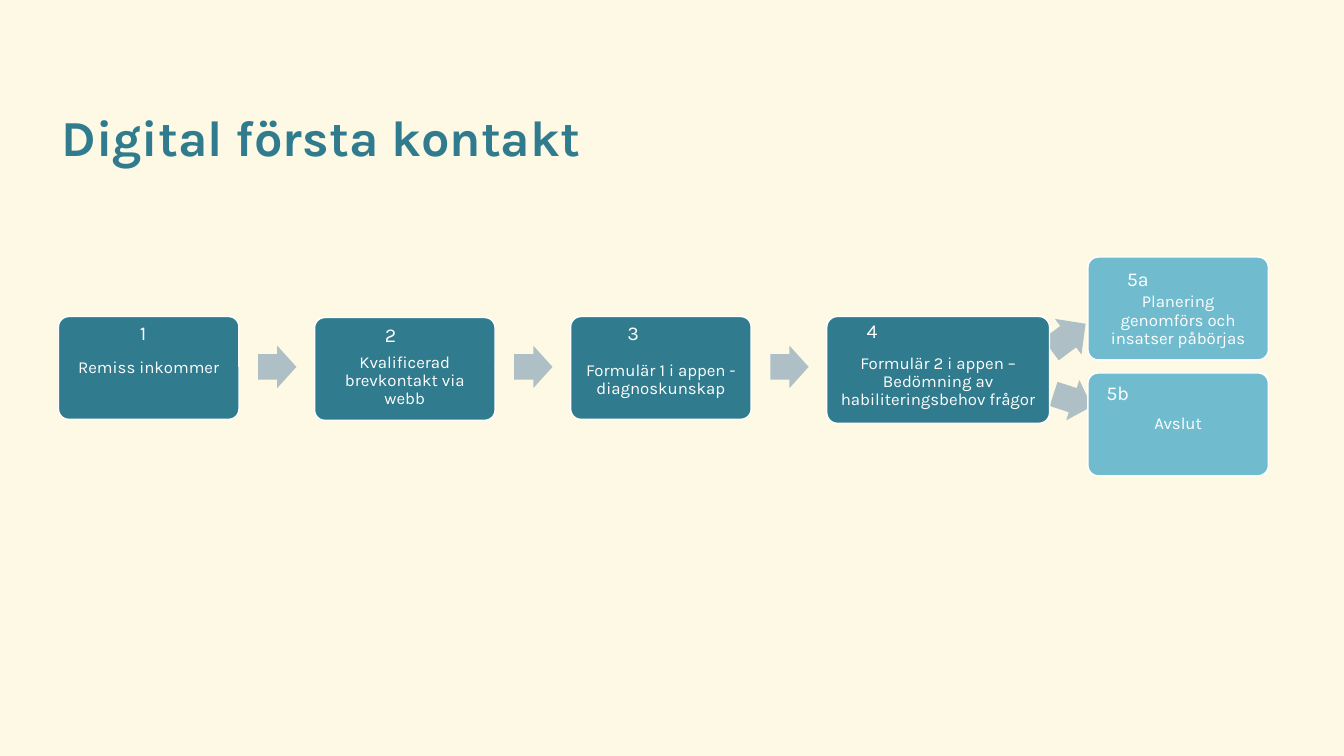
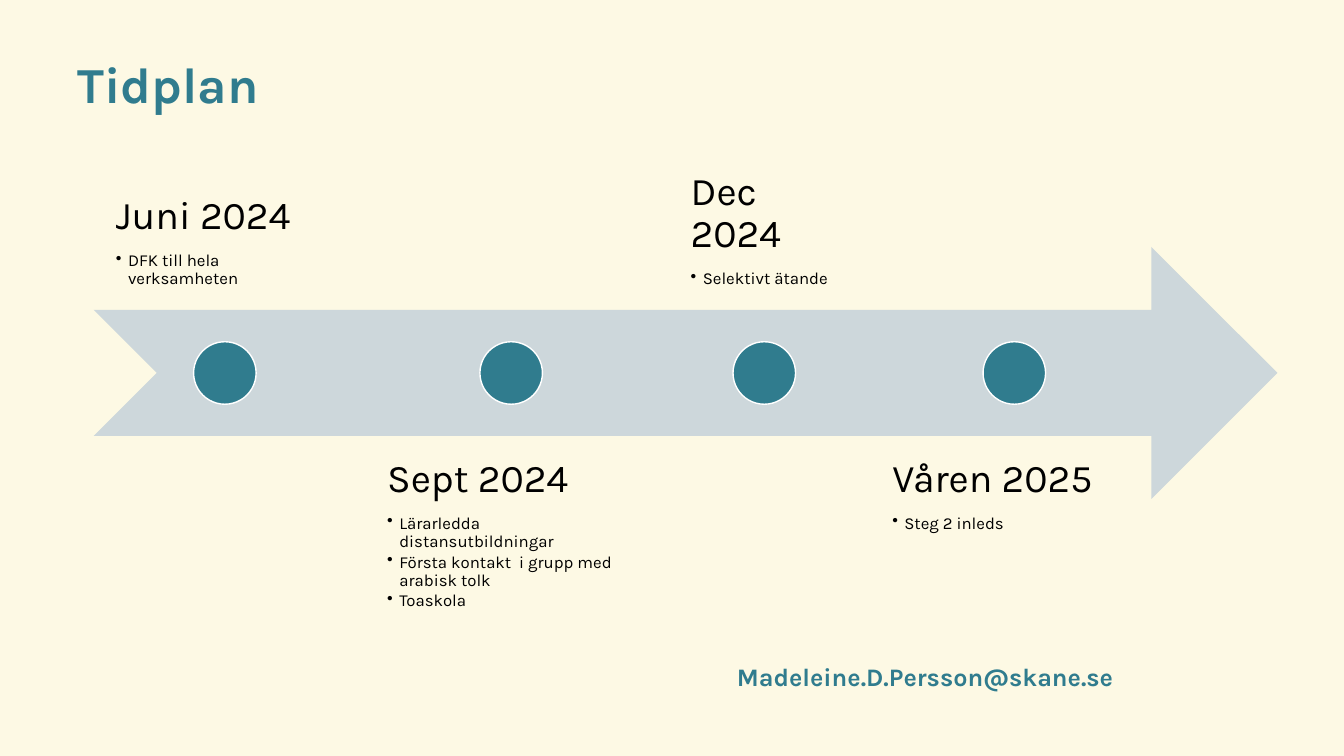
from lxml import etree
from pptx import Presentation
from pptx import util as u
from pptx.dml.color import RGBColor
from pptx.enum import shapes, text
from pptx.oxml import ns

FONT = "Karla"
CREAM, TEAL, SKY, WHITE, BLACK = "FDF9E4", "307C8E", "70BCCE", "FFFFFF", "000000"
ARROW_GREY, BAND_GREY = "AEBFC6", "CDD7DB"
SHAPE = shapes.MSO_SHAPE
ANCHOR = text.MSO_ANCHOR
ALIGN = text.PP_ALIGN

STEP_LEFT, STEP_PITCH, STEP_WIDTH, STEP_HEIGHT = 0.58, 2.54, 1.79, 1.02
BELOW_NUMBER = 0.32
STEPS = [
    (STEP_LEFT, 3.14, STEP_WIDTH, STEP_HEIGHT, TEAL, 0.08, "Remiss inkommer"),
    (STEP_LEFT + STEP_PITCH, 3.15, STEP_WIDTH, STEP_HEIGHT, TEAL, BELOW_NUMBER,
     "Kvalificerad brevkontakt via webb"),
    (STEP_LEFT + 2 * STEP_PITCH, 3.14, STEP_WIDTH, STEP_HEIGHT, TEAL, BELOW_NUMBER,
     "Formulär 1 i appen - diagnoskunskap"),
    (STEP_LEFT + 3 * STEP_PITCH, 3.14, 2.21, 1.06, TEAL, BELOW_NUMBER,
     "Formulär 2 i appen – Bedömning av habiliteringsbehov frågor"),
    (10.79, 2.55, STEP_WIDTH, STEP_HEIGHT, SKY, BELOW_NUMBER,
     "Planering genomförs och insatser påbörjas"),
    (10.79, 3.7, STEP_WIDTH, STEP_HEIGHT, SKY, 0.08, "Avslut"),
]
NUMBERS = [
    (1.23, 3.17, 0.38, 0.27, TEAL, "1"),
    (3.56, 3.17, 0.63, 0.29, TEAL, "2"),
    (6.01, 3.16, 0.54, 0.29, TEAL, "3"),
    (8.38, 3.17, 0.54, 0.23, TEAL, "4"),
    (10.88, 2.65, 0.81, 0.22, SKY, "5a"),
    (10.81, 3.78, 0.55, 0.24, SKY, "5b"),
]
BRANCH_ARROWS = [(10.38, 3.12, 0.43, 0.44, 323.3), (10.44, 3.76, 0.4, 0.42, 18.1)]
ABOVE, BELOW = (0.58, ANCHOR.BOTTOM), (4.33, ANCHOR.TOP)
MILESTONES = [
    (0.93, 2.59, ABOVE, 1.92, "Juni 2024", ["DFK till hela verksamheten"]),
    (3.62, 2.91, BELOW, 4.76, "Sept 2024",
     ["Lärarledda distansutbildningar", "Första kontakt  i grupp med arabisk tolk", "Toaskola"]),
    (6.63, 1.91, ABOVE, 7.27, "Dec 2024", ["Selektivt ätande"]),
    (8.63, 2.86, BELOW, 9.75, "Våren 2025", ["Steg 2 inleds"]),
]


def rgb(value):
    """Turn a hex string into a colour."""
    return RGBColor.from_string(value)


def box(left, top, width, height):
    """Convert a rectangle in inches to lengths."""
    return [u.Inches(value) for value in (left, top, width, height)]


def add_run(paragraph, content, size, color, bold=False):
    """Add one formatted run to a paragraph."""
    run = paragraph.add_run()
    run.text = content
    run.font.name = FONT
    run.font.size = u.Pt(size)
    run.font.bold = bold
    run.font.color.rgb = rgb(color)


def set_frame(frame, anchor, left, top, right, bottom):
    """Set wrapping, anchor and insets of a text frame."""
    frame.word_wrap = True
    frame.vertical_anchor = anchor
    frame.margin_left, frame.margin_top = u.Inches(left), u.Inches(top)
    frame.margin_right, frame.margin_bottom = u.Inches(right), u.Inches(bottom)


def add_title(slide, content, left, top):
    """Place and format the slide title."""
    title = slide.shapes.title
    title.left, title.top, title.width, title.height = box(left, top, 12, 0.82)
    set_frame(title.text_frame, ANCHOR.MIDDLE, 0.1, 0.05, 0.1, 0.05)
    paragraph = title.text_frame.paragraphs[0]
    paragraph.alignment = ALIGN.LEFT
    paragraph.line_spacing = 1.1
    add_run(paragraph, content, 36, TEAL, bold=True)


def add_solid(slide, kind, place, fill, outlined=False):
    """Add a filled preset shape, with a thin white outline if wanted."""
    shape = slide.shapes.add_shape(kind, *box(*place))
    shape.shadow.inherit = False
    shape.fill.solid()
    shape.fill.fore_color.rgb = rgb(fill)
    if outlined:
        shape.line.color.rgb = rgb(WHITE)
        shape.line.width = u.Pt(1)
    else:
        shape.line.fill.background()
    return shape


def add_flow_arrow(slide, place, rotation=0):
    """Add a block arrow between two steps."""
    arrow = add_solid(slide, SHAPE.RIGHT_ARROW, place, ARROW_GREY)
    arrow.adjustments[0] = 0.6
    arrow.adjustments[1] = 0.5
    arrow.rotation = rotation


def add_centred_text(shape, content, size, insets, line_spacing):
    """Write one centred white paragraph in a shape."""
    set_frame(shape.text_frame, ANCHOR.MIDDLE, *insets)
    paragraph = shape.text_frame.paragraphs[0]
    paragraph.alignment = ALIGN.CENTER
    paragraph.line_spacing = line_spacing
    add_run(paragraph, content, size, WHITE)


def add_step(slide, left, top, width, height, fill, top_inset, content):
    """Add a rounded process step with its text."""
    step = add_solid(slide, SHAPE.ROUNDED_RECTANGLE, (left, top, width, height), fill, True)
    step.adjustments[0] = 0.1
    add_centred_text(step, content, 12, (0.08, top_inset, 0.08, 0.08), 0.9)


def add_number(slide, left, top, width, height, fill, content):
    """Add the number label of a step."""
    label = add_solid(slide, SHAPE.ROUNDED_RECTANGLE, (left, top, width, height), fill)
    add_centred_text(label, content, 14, (0, 0, 0, 0), 1.0)


def set_bullet(paragraph):
    """Give a paragraph a hanging round bullet."""
    properties = paragraph._p.get_or_add_pPr()
    properties.set("lvl", "1")
    properties.set("marL", str(u.Inches(0.12)))
    properties.set("indent", str(-u.Inches(0.12)))
    etree.SubElement(properties, ns.qn("a:buChar")).set("char", "•")


def add_milestone(slide, left, width, side, dot_left, heading, items):
    """Add a dated text block and its dot on the time arrow."""
    top, anchor = side
    frame = slide.shapes.add_textbox(*box(left, top, width, 2.5)).text_frame
    set_frame(frame, anchor, 0.22, 0.22, 0.25, 0.22)
    paragraph = frame.paragraphs[0]
    paragraph.line_spacing = 0.9
    paragraph.space_after = u.Pt(9.8)
    add_run(paragraph, heading, 28, BLACK)
    for item in items:
        paragraph = frame.add_paragraph()
        set_bullet(paragraph)
        paragraph.line_spacing = 0.9
        paragraph.space_after = u.Pt(1.8)
        add_run(paragraph, item, 12, BLACK)
    add_solid(slide, SHAPE.OVAL, (dot_left, 3.39, 0.62, 0.62), TEAL, True)


def build_contact_slide(slide):
    """Build the process from referral to outcome."""
    add_title(slide, "Digital första kontakt", 0.51, 0.91)
    for index in range(3):
        add_flow_arrow(slide, (2.56 + index * STEP_PITCH, 3.43, 0.38, 0.42))
    for *place, rotation in BRANCH_ARROWS:
        add_flow_arrow(slide, place, rotation)
    for step in STEPS:
        add_step(slide, *step)
    for number in NUMBERS:
        add_number(slide, *number)


def build_schedule_slide(slide):
    """Build the timeline with the contact address."""
    add_title(slide, "Tidplan", 0.67, 0.39)
    add_solid(slide, SHAPE.NOTCHED_RIGHT_ARROW, (0.93, 2.45, 11.74, 2.5), BAND_GREY)
    for milestone in MILESTONES:
        add_milestone(slide, *milestone)
    contact = slide.shapes.add_textbox(*box(7.21, 6.51, 4.08, 0.4)).text_frame
    set_frame(contact, ANCHOR.TOP, 0.1, 0.05, 0.1, 0.05)
    add_run(contact.paragraphs[0], "Madeleine.D.Persson@skane.se", 18, TEAL, bold=True)


def main():
    """Create and save the presentation."""
    presentation = Presentation()
    presentation.slide_width, presentation.slide_height = u.Inches(13.33), u.Inches(7.5)
    background = presentation.slide_master.background.fill
    background.solid()
    background.fore_color.rgb = rgb(CREAM)
    for build in (build_contact_slide, build_schedule_slide):
        build(presentation.slides.add_slide(presentation.slide_layouts[5]))
    presentation.save("out.pptx")


if __name__ == "__main__":
    main()
